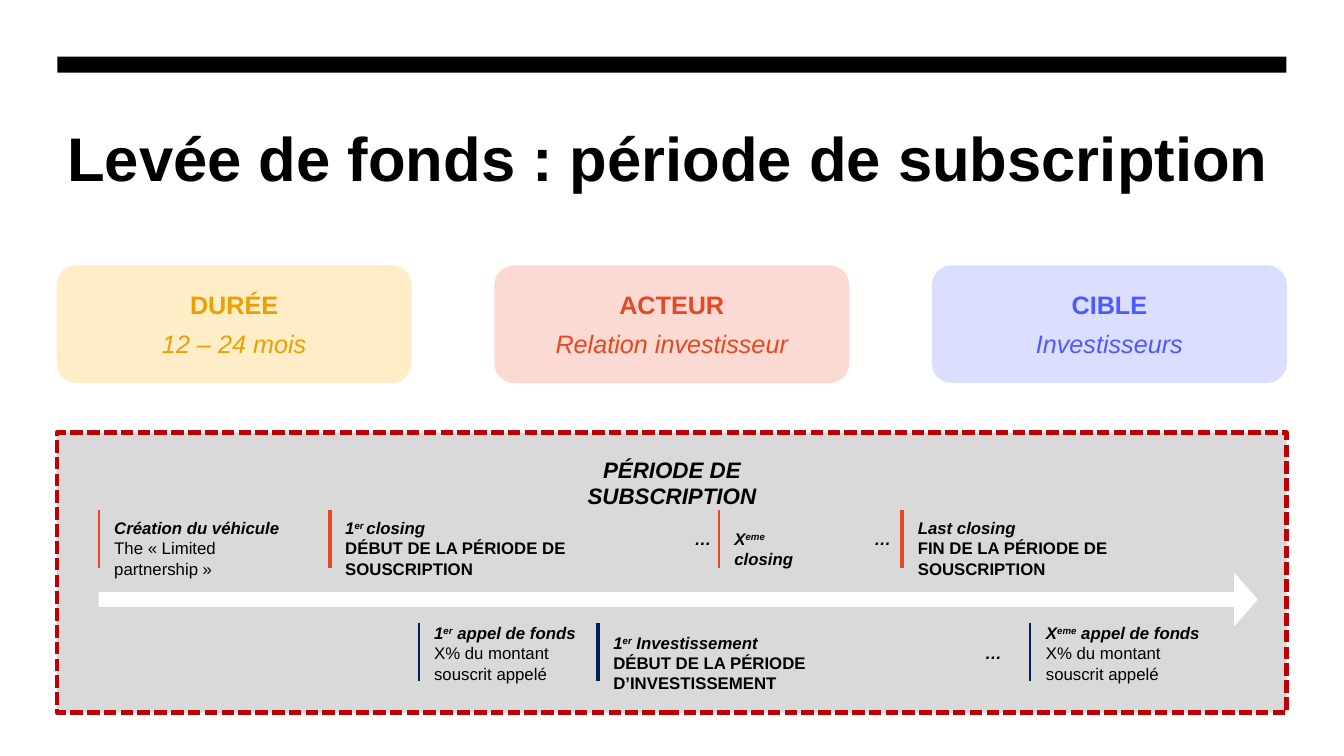
from lxml.etree import SubElement
from pptx import Presentation
from pptx.dml.color import RGBColor
from pptx.enum.dml import MSO_LINE
from pptx.enum.shapes import MSO_CONNECTOR, MSO_SHAPE
from pptx.enum.text import MSO_ANCHOR, PP_ALIGN
from pptx.oxml.ns import qn
from pptx.util import Pt

RED, NAVY, BLACK = "E64823", "002060", "000000"
BOLD_ITALIC = dict(bold=True, italic=True)
BOLD = dict(bold=True, italic=False)
PLAIN = dict(bold=False, italic=False)
ITALIC = dict(bold=False, italic=True)

prs = Presentation()
prs.slide_width, prs.slide_height = Pt(960), Pt(540)
s = prs.slides.add_slide(prs.slide_layouts[6])


def add_block(kind, box, fill):
    sp = s.shapes.add_shape(kind, *map(Pt, box))
    sp.shadow.inherit = False
    sp.fill.solid()
    sp.fill.fore_color.rgb = RGBColor.from_string(fill)
    sp.line.fill.background()
    return sp


def write(tf, lines, size, color=BLACK, align=PP_ALIGN.LEFT, gap=0):
    """Fill a frame with (text, style) lines; text between ^ signs is superscript."""
    tf.word_wrap = True
    for i, (text, style) in enumerate(lines):
        p = tf.add_paragraph() if i else tf.paragraphs[0]
        p.alignment = align
        if i < len(lines) - 1:
            p.space_after = Pt(gap)
        for j, part in enumerate(text.split("^")):
            r = p.add_run()
            r.text = part
            for name, value in dict(style, name="Arial", size=Pt(size)).items():
                setattr(r.font, name, value)
            r.font.color.rgb = RGBColor.from_string(color)
            if j % 2:
                r._r.get_or_add_rPr().set("baseline", "30000")


# Header
add_block(MSO_SHAPE.RECTANGLE, (41, 40.5, 878, 11.5), BLACK)
title = s.shapes.add_textbox(Pt(41), Pt(82), Pt(890), Pt(60))
write(title.text_frame, [("Levée de fonds : période de subscription", BOLD)], 44)

# Cards
cards = [
    ("DURÉE", "12 – 24 mois", "FFEDC8", "EBA000"),
    ("ACTEUR", "Relation investisseur", "FADAD3", RED),
    ("CIBLE", "Investisseurs", "DBDEFF", "4D5AFF"),
]
for i, (heading, value, fill, color) in enumerate(cards):
    card = add_block(MSO_SHAPE.ROUNDED_RECTANGLE, (40.5 + 312.6 * i, 189.5, 253.5, 84), fill)
    card.text_frame.vertical_anchor = MSO_ANCHOR.MIDDLE
    write(card.text_frame, [(heading, BOLD), (value, ITALIC)], 18, color, PP_ALIGN.CENTER, 6)

# Timeline frame, heading and arrow
frame = add_block(MSO_SHAPE.RECTANGLE, (40.5, 309, 878.5, 200), "D9D9D9")
frame.line.color.rgb = RGBColor.from_string("C00000")
frame.line.width = Pt(3)
frame.line.dash_style = MSO_LINE.SQUARE_DOT
frame.line._ln.find(qn("a:prstDash")).set("val", "sysDash")
heading = s.shapes.add_textbox(Pt(390), Pt(322), Pt(180), Pt(46))
write(heading.text_frame, [("PÉRIODE DE SUBSCRIPTION", BOLD_ITALIC)], 16, align=PP_ALIGN.CENTER)
arrow = add_block(MSO_SHAPE.RIGHT_ARROW, (70.5, 409, 828, 38.5), "FFFFFF")
arrow.adjustments[0], arrow.adjustments[1] = 0.275, 0.441

# Milestones: marker x, marker top, weight, colour, text top, text width, lines
call = ("X% du montant souscrit appelé", PLAIN)
milestones = [
    (70.5, 364.5, 1.5, RED, 366.5, 137,
     [("Création du véhicule", BOLD_ITALIC), ("The «\u00a0Limited partnership\u00a0»", PLAIN)]),
    (235.5, 364.5, 3, RED, 366.5, 190,
     [("1^er ^closing", BOLD_ITALIC), ("DÉBUT DE LA PÉRIODE DE SOUSCRIPTION", BOLD)]),
    (513.5, 364.5, 1.5, RED, 374, 65, [("X^eme ^closing", BOLD_ITALIC)]),
    (644.5, 364.5, 3, RED, 366.5, 190,
     [("Last closing", BOLD_ITALIC), ("FIN DE LA PÉRIODE DE SOUSCRIPTION", BOLD)]),
    (299, 445, 1.5, NAVY, 441.5, 126, [("1^er^ appel de fonds", BOLD_ITALIC), call]),
    (427, 445, 3, NAVY, 448.5, 190,
     [("1^er^ Investissement", BOLD_ITALIC), ("DÉBUT DE LA PÉRIODE D’INVESTISSEMENT", BOLD)]),
    (736, 445, 1.5, NAVY, 441.5, 126, [("X^eme^ appel de fonds", BOLD_ITALIC), call]),
]
for x, top, weight, color, text_top, width, lines in milestones:
    marker = s.shapes.add_connector(MSO_CONNECTOR.STRAIGHT, Pt(x), Pt(top), Pt(x), Pt(top + 41.5))
    marker.line.color.rgb = RGBColor.from_string(color)
    marker.line.width = Pt(weight)
    SubElement(marker._element.spPr, qn("a:effectLst"))
    label = s.shapes.add_textbox(Pt(x + 4), Pt(text_top), Pt(width), Pt(50))
    write(label.text_frame, lines, 12)

for x, top in [(489, 374), (617.5, 374), (696.5, 455.5)]:
    dots = s.shapes.add_textbox(Pt(x), Pt(top), Pt(27), Pt(22))
    write(dots.text_frame, [("…", BOLD_ITALIC)], 12)

prs.save("out.pptx")
